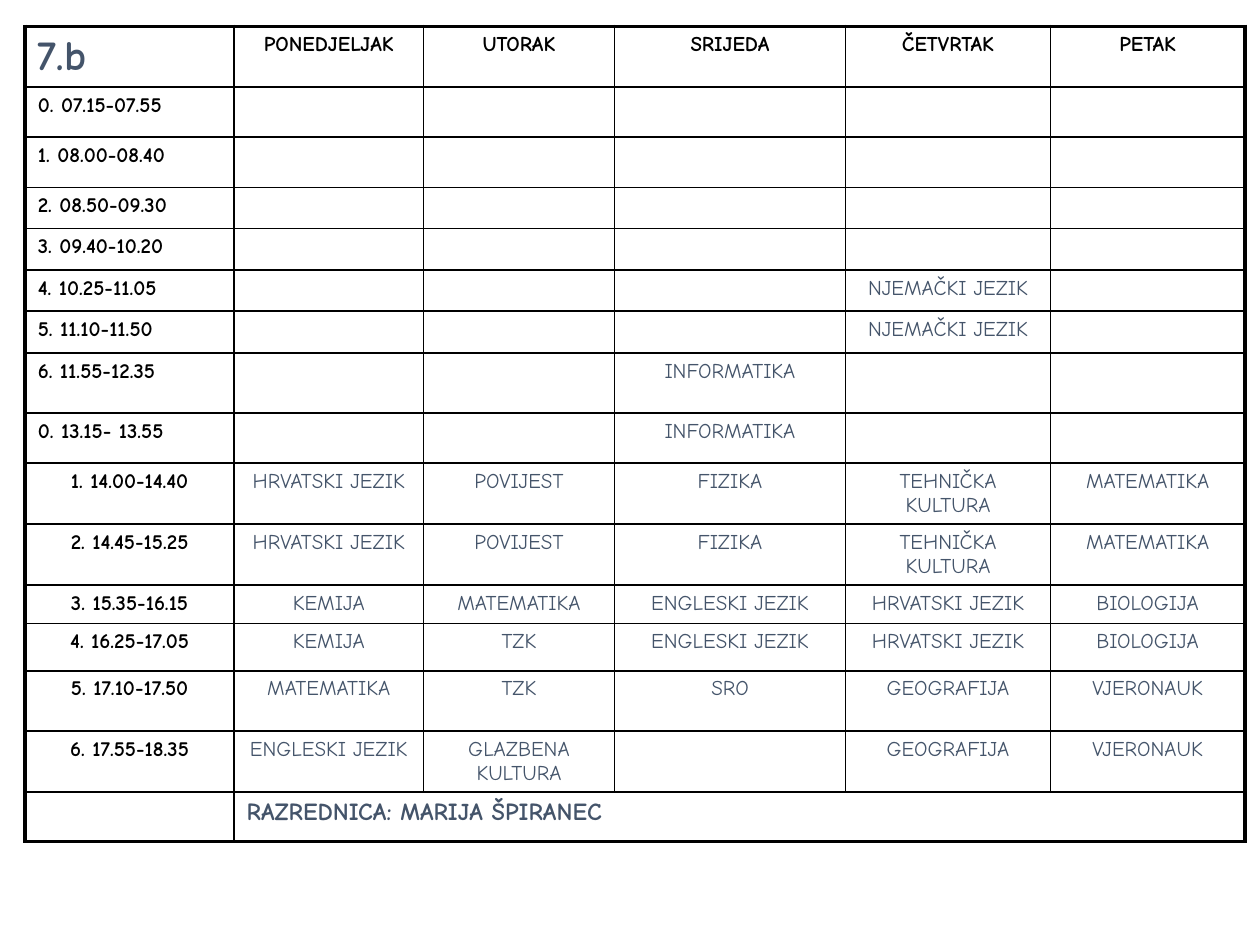
import pptx
import pptx.util
import pptx.dml.color
import pptx.enum.text
import pptx.oxml
import pptx.oxml.ns

Pt = pptx.util.Pt
RGB = pptx.dml.color.RGBColor.from_string
ALIGN = pptx.enum.text.PP_ALIGN

HEAD = ["7.b", "PONEDJELJAK", "UTORAK", "SRIJEDA", "ČETVRTAK", "PETAK"]
MORNING = [
    ["0. 07.15-07.55", "", "", "", "", ""],
    ["1. 08.00-08.40", "", "", "", "", ""],
    ["2. 08.50-09.30", "", "", "", "", ""],
    ["3. 09.40-10.20", "", "", "", "", ""],
    ["4. 10.25-11.05", "", "", "", "NJEMAČKI JEZIK", ""],
    ["5. 11.10-11.50", "", "", "", "NJEMAČKI JEZIK", ""],
    ["6. 11.55-12.35", "", "", "INFORMATIKA", "", ""],
    ["0. 13.15- 13.55", "", "", "INFORMATIKA", "", ""],
]
LATE = [
    ["1. 14.00-14.40", "HRVATSKI JEZIK", "POVIJEST", "FIZIKA", "TEHNIČKA KULTURA", "MATEMATIKA"],
    ["2. 14.45-15.25", "HRVATSKI JEZIK", "POVIJEST", "FIZIKA", "TEHNIČKA KULTURA", "MATEMATIKA"],
    ["3. 15.35-16.15", "KEMIJA", "MATEMATIKA", "ENGLESKI JEZIK", "HRVATSKI JEZIK", "BIOLOGIJA"],
    ["4. 16.25-17.05", "KEMIJA", "TZK", "ENGLESKI JEZIK", "HRVATSKI JEZIK", "BIOLOGIJA"],
    ["5. 17.10-17.50", "MATEMATIKA", "TZK", "SRO", "GEOGRAFIJA", "VJERONAUK"],
    ["6. 17.55-18.35", "ENGLESKI JEZIK", "GLAZBENA KULTURA", "", "GEOGRAFIJA", "VJERONAUK"],
]
FOOT = ["", "RAZREDNICA: MARIJA ŠPIRANEC", "", "", "", ""]
ROWS = [HEAD, *MORNING, *LATE, FOOT]

LEFT, TOP = 14.4, 15
WIDTHS = [119.4, 108.2, 109.2, 132, 117.2, 111]
HEIGHTS = [34.8, 28.6, 28.8, 23.4, 23.7, 23.4, 24, 34.3,
           28.6, 34.8, 34.8, 22, 27.1, 34.3, 35.1, 28.3]

BLACK, SLATE = "000000", "44546A"
THEME = {
    "font": "Comic Neue",
    "thin": 1,
    "thick": 2.25,
    "class": {"size": Pt(24), "bold": True, "color": SLATE},
    "label": {"size": Pt(12), "bold": True, "color": BLACK},
    "lesson": {"size": Pt(12), "bold": False, "color": SLATE},
    "foot": {"size": Pt(14), "bold": True, "color": SLATE},
}


def pick(row, col):
    if row == col == 0:
        return "class"
    if row == len(ROWS) - 1:
        return "foot"
    return "label" if row == 0 or col == 0 else "lesson"


def write(cell, text, style, align):
    para = cell.text_frame.paragraphs[0]
    para.alignment = align
    if not text:
        size = THEME["lesson"]["size"].centipoints
        end = pptx.oxml.parse_xml(
            f'<a:endParaRPr {pptx.oxml.ns.nsdecls("a")} sz="{size}"/>')
        para._p.append(end)
        return
    run = para.add_run()
    run.text = text
    run.font.name = THEME["font"]
    for key, value in THEME[style].items():
        if key == "color":
            run.font.color.rgb = RGB(value)
        else:
            setattr(run.font, key, value)


def edge(cell, outer):
    props = cell._tc.get_or_add_tcPr()
    for spot, side in enumerate("LRTB"):
        width = Pt(THEME["thick" if outer[side] else "thin"])
        line = pptx.oxml.parse_xml(
            f'<a:ln{side} {pptx.oxml.ns.nsdecls("a")} w="{width}">'
            f'<a:solidFill><a:srgbClr val="{BLACK}"/></a:solidFill></a:ln{side}>')
        props.insert(spot, line)


def main():
    deck = pptx.Presentation()
    deck.slide_width, deck.slide_height = Pt(720), Pt(540)
    slide = deck.slides.add_slide(deck.slide_layouts[6])
    frame = slide.shapes.add_table(
        len(ROWS), len(WIDTHS), Pt(LEFT), Pt(TOP), Pt(sum(WIDTHS)), Pt(sum(HEIGHTS)))
    table = frame.table
    table.first_row = table.horz_banding = False
    for col, width in zip(table.columns, WIDTHS):
        col.width = Pt(width)
    for row, height in zip(table.rows, HEIGHTS):
        row.height = Pt(height)

    last, end = len(ROWS) - 1, len(WIDTHS) - 1
    late = len(MORNING) + 1
    for r, row in enumerate(ROWS):
        for c, text in enumerate(row):
            cell = table.cell(r, c)
            cell.fill.background()
            flush = r == last or (c == 0 and r < late)
            write(cell, text, pick(r, c), ALIGN.LEFT if flush else ALIGN.CENTER)
            edge(cell, {"L": c == 0, "R": c == end or (r == last and c > 0),
                        "T": r == 0, "B": r == last})
    table.cell(last, 1).merge(table.cell(last, end))
    deck.save("out.pptx")


if __name__ == "__main__":
    main()
